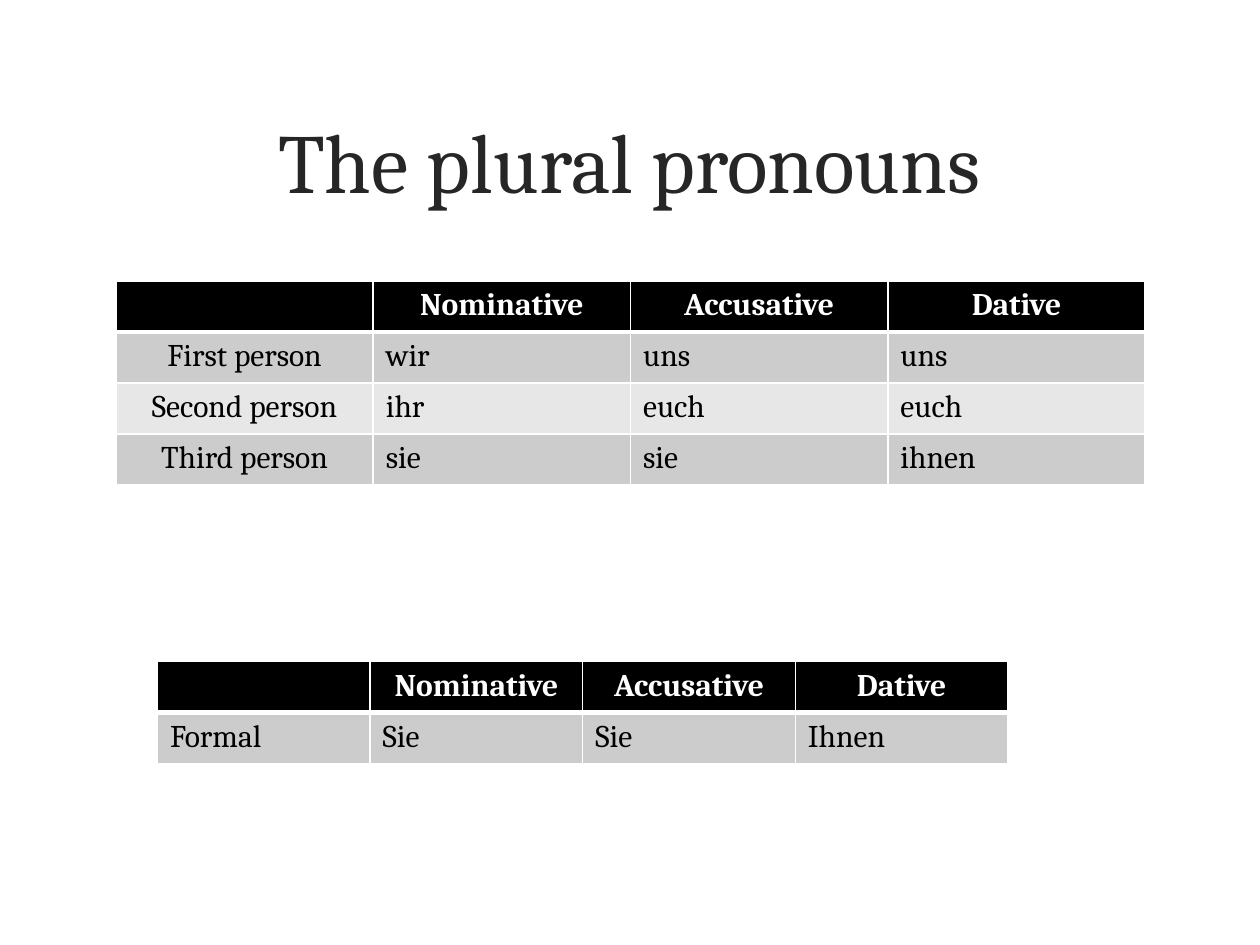
from lxml import etree
from pptx import Presentation
from pptx.dml.color import RGBColor
from pptx.enum.text import MSO_ANCHOR, PP_ALIGN
from pptx.oxml.ns import qn
from pptx.util import Inches, Pt

CENTER, LEFT = PP_ALIGN.CENTER, PP_ALIGN.LEFT
MIDDLE = MSO_ANCHOR.MIDDLE

BLACK = RGBColor(0x00, 0x00, 0x00)
WHITE = RGBColor(0xFF, 0xFF, 0xFF)
TITLE_GRAY = RGBColor(0x26, 0x26, 0x26)
BANDS = [RGBColor(0xCC, 0xCC, 0xCC), RGBColor(0xE7, 0xE7, 0xE7)]
FONT = "Cambria"
ROW_HEIGHT = 0.405

TITLE = "The plural pronouns"
HEADER = ["", "Nominative", "Accusative", "Dative"]
TABLES = [
    {
        "place": (0.92, 2.23, 8.17),
        "label_align": CENTER,
        "rows": [
            ["First person", "wir", "uns", "uns"],
            ["Second person", "ihr", "euch", "euch"],
            ["Third person", "sie", "sie", "ihnen"],
        ],
    },
    {
        "place": (1.25, 5.25, 6.75),
        "label_align": LEFT,
        "rows": [["Formal", "Sie", "Sie", "Ihnen"]],
    },
]


def style_paragraph(para, size, color, align, bold=False):
    para.alignment = align
    para.font.name = FONT
    para.font.size = Pt(size)
    para.font.bold = bold
    para.font.color.rgb = color


def add_borders(cell, bottom_width):
    properties = cell._tc.get_or_add_tcPr()
    for side, width in (("L", 1), ("R", 1), ("T", 1), ("B", bottom_width)):
        line = etree.SubElement(properties, qn(f"a:ln{side}"), w=str(Pt(width)))
        fill = etree.SubElement(line, qn("a:solidFill"))
        etree.SubElement(fill, qn("a:srgbClr"), val=str(WHITE))


def add_title(page):
    box = page.shapes.add_textbox(Inches(0.6), Inches(0.48), Inches(8.79), Inches(1.58))
    frame = box.text_frame
    frame.word_wrap = True
    frame.vertical_anchor = MIDDLE
    para = frame.paragraphs[0]
    para.text = TITLE
    style_paragraph(para, 48, TITLE_GRAY, CENTER)


def add_pronoun_table(page, place, label_align, rows):
    left, top, width = place
    lines = [HEADER] + rows
    table = page.shapes.add_table(
        len(lines), len(HEADER), Inches(left), Inches(top),
        Inches(width), Inches(ROW_HEIGHT * len(lines)),
    ).table
    for row, words in enumerate(lines):
        is_header = row == 0
        for column, word in enumerate(words):
            cell = table.cell(row, column)
            add_borders(cell, 3 if is_header else 1)
            cell.fill.solid()
            cell.fill.fore_color.rgb = BLACK if is_header else BANDS[(row - 1) % 2]
            para = cell.text_frame.paragraphs[0]
            para.text = word
            body_align = label_align if column == 0 else LEFT
            style_paragraph(para, 18, WHITE if is_header else BLACK,
                            CENTER if is_header else body_align, is_header)


def main():
    deck = Presentation()
    deck.slide_width, deck.slide_height = Inches(10), Inches(7.5)
    page = deck.slides.add_slide(deck.slide_layouts[6])
    add_title(page)
    for table in TABLES:
        add_pronoun_table(page, **table)
    deck.save("out.pptx")


if __name__ == "__main__":
    main()
